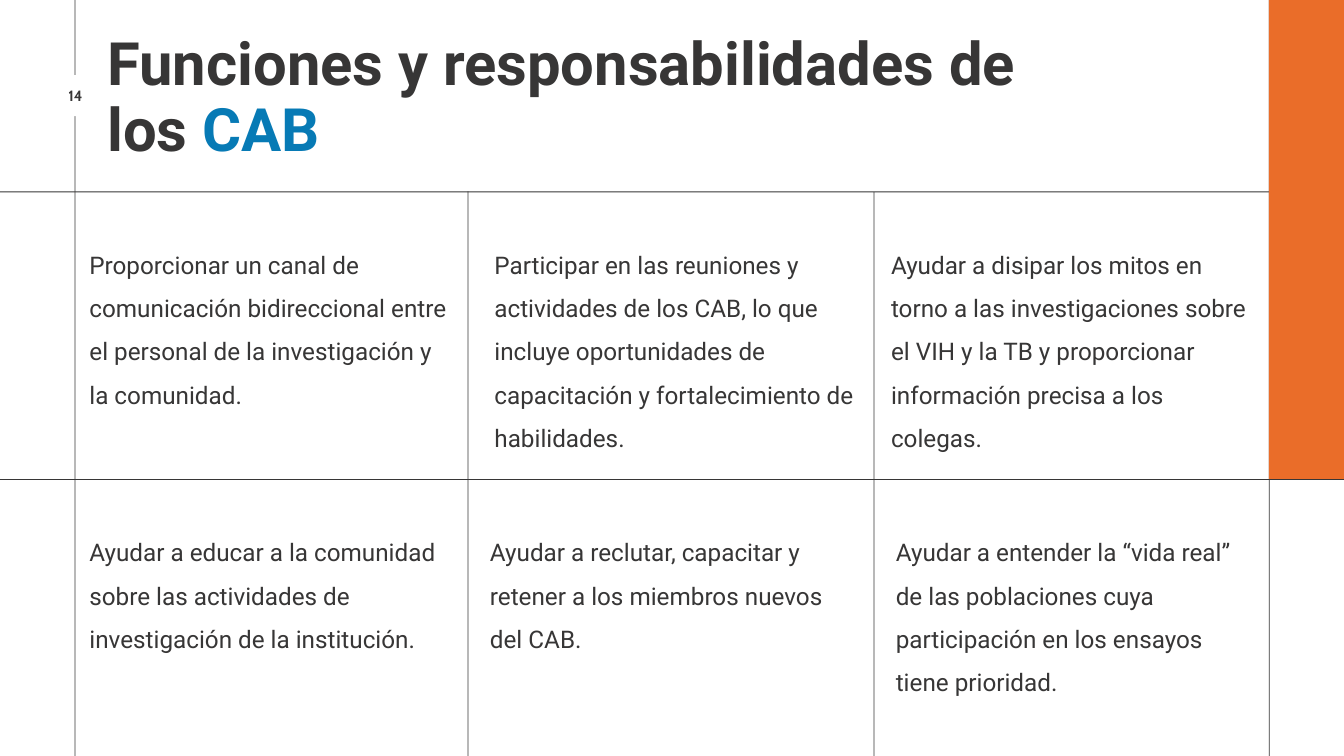
from pptx import Presentation
from pptx.dml.color import RGBColor
from pptx.enum.shapes import MSO_SHAPE
from pptx.enum.text import MSO_AUTO_SIZE, PP_ALIGN
from pptx.util import Cm, Pt

COLORS = {"ink": "373636", "paper": "FFFFFF", "orange": "EA6D29", "blue": "077AB5"}
HAIRLINE = 0.03
COLUMN_RULES = [
    (2.82, -0.99, 30.53),
    (47.96, -0.99, 30.53),
    (17.68, 7.24, 22.3),
    (33.02, 7.26, 22.71),
]
ROW_RULES = [7.24, 18.11]
CELL_WIDTH = 13.69
CELL_ROWS = [
    (8.92, [
        (3.38, 8.03, "Proporcionar un canal de comunicación bidireccional entre "
                     "el personal de la investigación y \nla comunidad."),
        (18.69, 7.98, "Participar en las reuniones y actividades de los CAB, lo que incluye "
                      "oportunidades de capacitación y fortalecimiento de habilidades."),
        (33.68, 9.63, "Ayudar a disipar los mitos en torno a las investigaciones sobre "
                      "el VIH y la TB y proporcionar información precisa a los colegas."),
    ]),
    (19.79, [
        (3.38, 8, "Ayudar a educar a la comunidad sobre las actividades "
                  "de investigación de la institución."),
        (18.52, 6.35, "Ayudar a reclutar, capacitar y retener a los miembros nuevos del CAB."),
        (33.86, 8, "Ayudar a entender la “vida real” de las poblaciones cuya "
                   "participación en los ensayos tiene prioridad."),
    ]),
]


def add_run(paragraph, text, font="Roboto", size=26, color="ink", bold=False):
    """Append formatted text, turning newlines into line breaks."""
    for index, line in enumerate(text.split("\n")):
        if index:
            paragraph.add_line_break()
        run = paragraph.add_run()
        run.text = line
        run.font.name = font
        run.font.size = Pt(size)
        run.font.bold = bold
        run.font.color.rgb = RGBColor.from_string(COLORS[color])


class SlideBuilder:
    """Draw styled elements on the current slide."""

    def __init__(self, slide):
        """Keep the slide to draw on."""
        self.slide = slide

    def block(self, left, top, width, height, color="ink", parent=None):
        """Draw a plain filled rectangle."""
        shapes = (parent or self.slide).shapes
        shape = shapes.add_shape(MSO_SHAPE.RECTANGLE, Cm(left), Cm(top), Cm(width), Cm(height))
        shape.shadow.inherit = False
        shape.fill.solid()
        shape.fill.fore_color.rgb = RGBColor.from_string(COLORS[color])
        shape.line.fill.background()

    def text(self, left, top, width, height, spacing, align=PP_ALIGN.LEFT, parent=None):
        """Add a borderless text box and return its paragraph."""
        shapes = (parent or self.slide).shapes
        frame = shapes.add_textbox(Cm(left), Cm(top), Cm(width), Cm(height)).text_frame
        frame.word_wrap = True
        frame.auto_size = MSO_AUTO_SIZE.SHAPE_TO_FIT_TEXT
        frame.margin_left = frame.margin_right = frame.margin_top = frame.margin_bottom = 0
        paragraph = frame.paragraphs[0]
        paragraph.alignment = align
        paragraph.line_spacing = Pt(spacing)
        return paragraph

    def page_number(self, number):
        """Draw the page number on a patch that interrupts the left rule."""
        group = self.slide.shapes.add_group_shape()
        self.block(1.75, 2.84, 2.18, 1.55, "paper", parent=group)
        paragraph = self.text(1.93, 3.33, 1.85, 0.64, 17.6, PP_ALIGN.CENTER, parent=group)
        add_run(paragraph, number, font="Cabin", size=16, bold=True)

    def title(self, text, highlight):
        """Write the heading with its last word highlighted."""
        paragraph = self.text(4.06, 1.22, 34.9, 4.98, 70.4)
        add_run(paragraph, text, size=64, bold=True)
        add_run(paragraph, highlight, size=64, bold=True, color="blue")


def main():
    """Build the slide and save it."""
    presentation = Presentation()
    presentation.slide_width = Cm(50.8)
    presentation.slide_height = Cm(28.58)
    builder = SlideBuilder(presentation.slides.add_slide(presentation.slide_layouts[6]))

    left_rule, *other_rules = COLUMN_RULES
    builder.block(left_rule[0], left_rule[1], HAIRLINE, left_rule[2])
    builder.page_number("14")
    for top in ROW_RULES:
        builder.block(0, top, 50.8, HAIRLINE)
    for left, top, height in other_rules:
        builder.block(left, top, HAIRLINE, height)
    builder.block(47.96, 0, 5.13, 18.11, "orange")

    builder.title("Funciones y responsabilidades de los", " CAB")
    for top, cells in CELL_ROWS:
        for left, height, text in cells:
            add_run(builder.text(left, top, CELL_WIDTH, height, 46.4), text)

    presentation.save("out.pptx")


if __name__ == "__main__":
    main()
